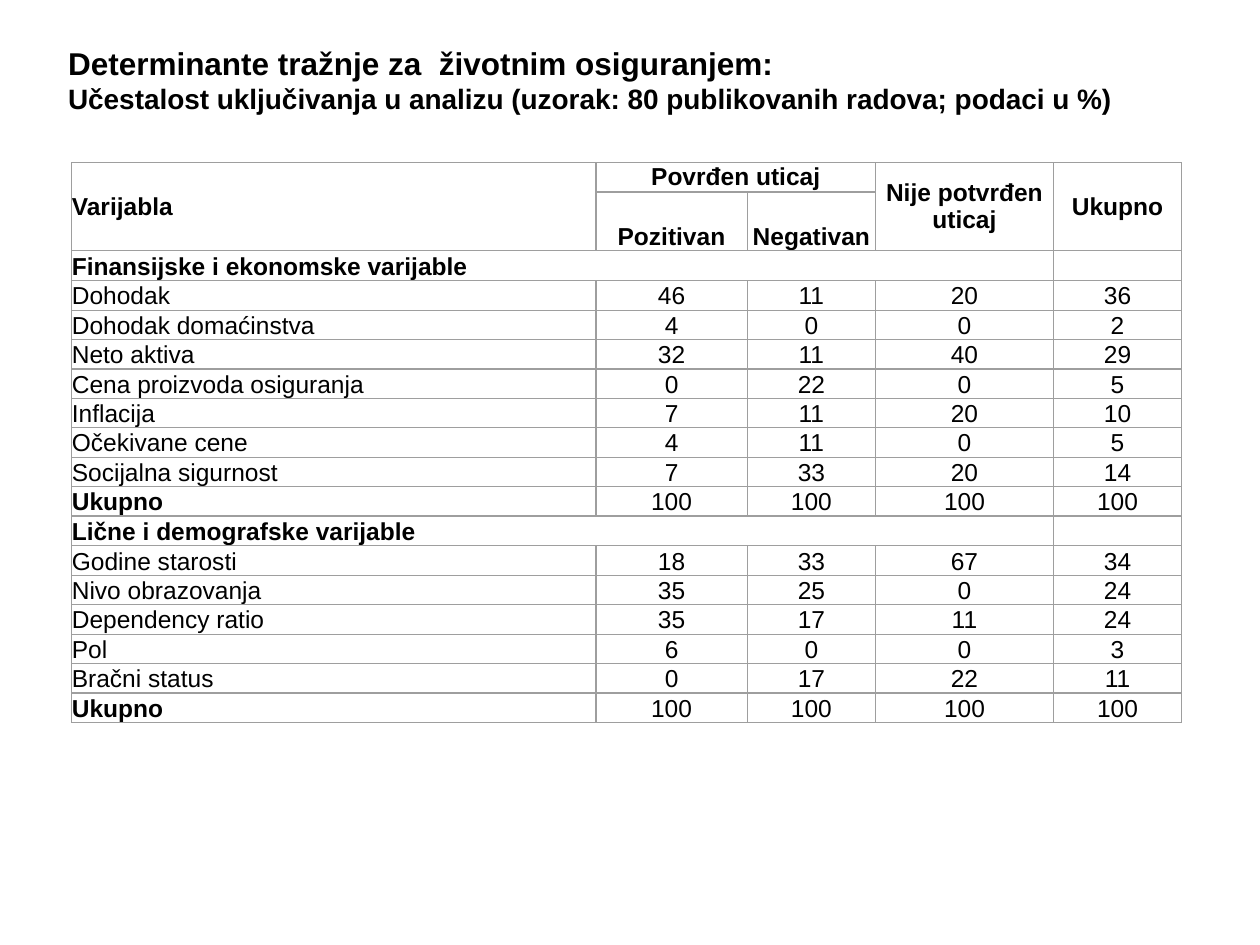
from lxml import etree
from pptx import Presentation
from pptx.dml.color import RGBColor
from pptx.enum.text import MSO_ANCHOR as ANCHOR, MSO_AUTO_SIZE as AUTO, PP_ALIGN as ALIGN
from pptx.oxml.ns import qn
from pptx.util import Inches, Pt

BLACK = RGBColor(0x00, 0x00, 0x00)
GREY = RGBColor(0x9E, 0x9E, 0x9E)
FONT = "Arial"
CELL_SIZE = Pt(14)

TITLE_LINES = [
    ("Determinante tražnje za  životnim osiguranjem:", 18),
    ("Učestalost uključivanja u analizu (uzorak: 80 publikovanih radova; podaci u %)", 16),
]
COL_WIDTHS = [4.16, 1.2, 1.02, 1.41, 1.02]
HEADER = [
    ("Varijabla", "Povrđen uticaj", "", "Nije potvrđen uticaj", "Ukupno"),
    ("", "Pozitivan", "Negativan", "", ""),
]
SECTIONS = [
    ("Finansijske i ekonomske varijable", [
        ("Dohodak", 46, 11, 20, 36),
        ("Dohodak domaćinstva", 4, 0, 0, 2),
        ("Neto aktiva", 32, 11, 40, 29),
        ("Cena proizvoda osiguranja", 0, 22, 0, 5),
        ("Inflacija", 7, 11, 20, 10),
        ("Očekivane cene", 4, 11, 0, 5),
        ("Socijalna sigurnost", 7, 33, 20, 14),
        ("Ukupno", 100, 100, 100, 100),
    ]),
    ("Lične i demografske varijable", [
        ("Godine starosti", 18, 33, 67, 34),
        ("Nivo obrazovanja", 35, 25, 0, 24),
        ("Dependency ratio", 35, 17, 11, 24),
        ("Pol", 6, 0, 0, 3),
        ("Bračni status", 0, 17, 22, 11),
        ("Ukupno", 100, 100, 100, 100),
    ]),
]


def add_run(p, text, size, bold):
    r = p.add_run()
    r.text = text
    r.font.name, r.font.size, r.font.bold = FONT, size, bold
    r.font.color.rgb = BLACK


def add_borders(cell):
    tc_pr = cell._tc.get_or_add_tcPr()
    for i, side in enumerate(("lnL", "lnR", "lnT", "lnB")):
        ln = etree.Element(qn(f"a:{side}"), w=str(Pt(0.75)))
        fill = etree.SubElement(ln, qn("a:solidFill"))
        etree.SubElement(fill, qn("a:srgbClr"), val=str(GREY))
        tc_pr.insert(i, ln)


def fill_cell(cell, text, bold, align, anchor):
    cell.margin_left = cell.margin_right = cell.margin_top = cell.margin_bottom = 0
    cell.vertical_anchor = anchor
    cell.fill.background()
    add_borders(cell)
    p = cell.text_frame.paragraphs[0]
    p.alignment = align
    if text:
        add_run(p, text, CELL_SIZE, bold)
    else:
        # An empty cell keeps the text size, so its row does not grow
        etree.SubElement(p._p, qn("a:endParaRPr"), sz=str(int(CELL_SIZE.pt * 100)))


def place_title(sp, left, top, width, height):
    sp.left, sp.top, sp.width, sp.height = left, top, width, height
    tf = sp.text_frame
    tf.word_wrap = True
    tf.auto_size = AUTO.NONE
    tf.vertical_anchor = ANCHOR.TOP
    for i, (text, size) in enumerate(TITLE_LINES):
        p = tf.add_paragraph() if i else tf.paragraphs[0]
        p.alignment = ALIGN.LEFT
        p.space_before = Pt(0)
        p.line_spacing = 1.0
        add_run(p, text, Pt(size), True)


def add_frequency_table(s, left, top, width, height):
    # Flatten the sections into rows, noting which ones are section headings
    rows, headings = list(HEADER), []
    for heading, data in SECTIONS:
        headings.append(len(rows))
        rows.append((heading, "", "", "", ""))
        rows += data

    table = s.shapes.add_table(len(rows), len(COL_WIDTHS), left, top, width, height).table
    table.first_row = table.horz_banding = False
    for col, w in zip(table.columns, COL_WIDTHS):
        col.width = Inches(w)
    # The second header row is twice as high as the others
    unit = height // (len(rows) + 1)
    for i, row in enumerate(table.rows):
        row.height = unit * 2 if i == 1 else unit

    for i, values in enumerate(rows):
        for j, value in enumerate(values):
            bold = i < len(HEADER) or i in headings or value == "Ukupno"
            tall = i == 0
            fill_cell(table.cell(i, j), str(value), bold,
                      ALIGN.CENTER if j else ALIGN.LEFT,
                      ANCHOR.MIDDLE if tall else ANCHOR.BOTTOM)

    # Merged header cells and section headings
    for j in (0, 3, 4):
        table.cell(0, j).merge(table.cell(1, j))
    table.cell(0, 1).merge(table.cell(0, 2))
    for i in headings:
        table.cell(i, 0).merge(table.cell(i, 3))


def main():
    prs = Presentation()
    prs.slide_width, prs.slide_height = Inches(10), Inches(7.5)
    s = prs.slides.add_slide(prs.slide_layouts[5])
    place_title(s.shapes.title, Inches(0.44), Inches(0.3), Inches(9.04), Inches(0.67))
    add_frequency_table(s, Inches(0.57), Inches(1.29), Inches(sum(COL_WIDTHS)), Inches(4.44))
    prs.save("out.pptx")


if __name__ == "__main__":
    main()
